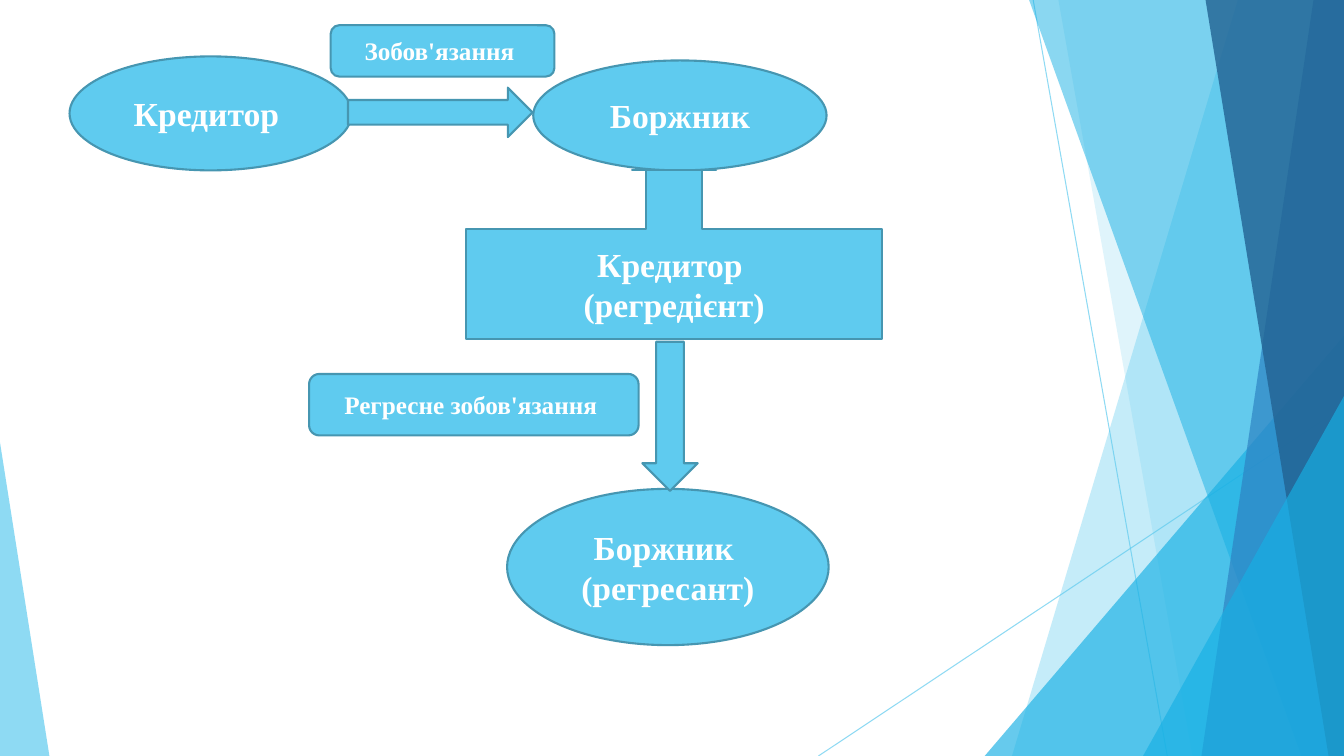
"""Build the slide on recourse obligations between creditor and debtor."""
from dataclasses import dataclass

from pptx import Presentation
from pptx import util as u
from pptx.dml.color import RGBColor
from pptx.enum import shapes, text
from pptx.oxml.ns import qn
from pptx.oxml.xmlchemy import OxmlElement
from pptx.shapes.base import BaseShape
from pptx.slide import Slide

WIDTH, HEIGHT = 960, 540
SKY = RGBColor(0x5F, 0xCB, 0xEF)
CYAN = RGBColor(0x17, 0xB0, 0xE4)
BLUE = RGBColor(0x2E, 0x83, 0xC3)
NAVY = RGBColor(0x22, 0x62, 0x92)
EDGE = RGBColor(0x46, 0x96, 0xB1)
WHITE = RGBColor(0xFF, 0xFF, 0xFF)

KIND = shapes.MSO_SHAPE
FRAME_FORMAT = {"word_wrap": True, "vertical_anchor": text.MSO_ANCHOR.MIDDLE}
FONT_FORMAT = {"name": "Times New Roman", "bold": True}


@dataclass
class Ray:
    start: tuple[float, float]
    end: tuple[float, float]


@dataclass
class Panel:
    top_x: float
    bottom_x: float
    color: RGBColor
    opacity: int


@dataclass
class Wedge:
    left: float
    top: float
    width: float
    apex: float
    color: RGBColor
    opacity: int


@dataclass
class Node:
    kind: shapes.MSO_SHAPE
    bounds: tuple[float, float, float, float]
    lines: tuple[str, ...] = ()
    size: float = 24
    adjustments: tuple[float, ...] = ()


RAYS = [
    Ray((738, 0), (833.8, HEIGHT)),
    Ray((WIDTH, 290.2), (584.6, HEIGHT)),
]

DECORATION = [
    Panel(884.2, 722.9, SKY, 36),
    Panel(756, 851.8, SKY, 20),
    Wedge(703.4, 239.8, 256.6, 1, CYAN, 66),
    Panel(735.1, 929.5, CYAN, 50),
    Panel(938.2, 858.2, BLUE, 70),
    Panel(861.1, 949, NAVY, 80),
    Wedge(816.5, 283, 143.5, 1, CYAN, 66),
    Wedge(0, 316.1, 35.3, 0, SKY, 70),
]

NODES = [
    Node(KIND.OVAL, (49.7, 40.3, 201.6, 81.4), ("Кредитор ",)),
    Node(KIND.OVAL, (380.9, 43.2, 209.5, 78.5), ("Боржник",)),
    Node(KIND.OVAL, (362.2, 349.2, 229.7, 111.6), ("Боржник ", "(регресант)")),
    Node(KIND.ROUNDED_RECTANGLE, (220.8, 267.1, 235.4, 43.9),
         ("Регресне зобов'язання ",), 18),
    Node(KIND.UP_ARROW_CALLOUT, (333, 121.7, 297, 120.2),
         ("Кредитор ", "(регредієнт)"), 24, (0.33, 0.25, 0, 0.65)),
    Node(KIND.ROUNDED_RECTANGLE, (236.2, 18, 159.8, 36.7), ("Зобов'язання ",), 18),
    Node(KIND.RIGHT_ARROW, (248.6, 62.6, 131.8, 35.3)),
    Node(KIND.DOWN_ARROW, (458.8, 244.1, 39.6, 106.6)),
]


def set_opacity(shape: BaseShape, percent: int) -> None:
    """Make the colour of a shape or connector partly transparent."""
    for color in shape._element.iter(qn("a:srgbClr")):
        alpha = OxmlElement("a:alpha")
        alpha.set("val", str(percent * 1000))
        color.append(alpha)


def draw_ray(page: Slide, ray: Ray) -> None:
    """Draw one thin decorative line."""
    points = [u.Pt(value) for value in (*ray.start, *ray.end)]
    line = page.shapes.add_connector(shapes.MSO_CONNECTOR.STRAIGHT, *points)
    line.line.color.rgb = SKY
    line.line.width = u.Pt(0.75)
    line._element.spPr.append(OxmlElement("a:effectLst"))
    set_opacity(line, 70)


def draw_decoration(page: Slide, item: Panel | Wedge) -> None:
    """Draw one translucent panel or triangular wedge."""
    if isinstance(item, Panel):
        builder = page.shapes.build_freeform(u.Pt(item.top_x), 0)
        corners = [(WIDTH, 0), (WIDTH, HEIGHT), (item.bottom_x, HEIGHT)]
        builder.add_line_segments([(u.Pt(x), u.Pt(y)) for x, y in corners])
        shape = builder.convert_to_shape()
    else:
        bounds = (item.left, item.top, item.width, HEIGHT - item.top)
        shape = page.shapes.add_shape(KIND.ISOSCELES_TRIANGLE, *map(u.Pt, bounds))
        shape.adjustments[0] = item.apex
    shape.shadow.inherit = False
    shape.fill.solid()
    shape.fill.fore_color.rgb = item.color
    shape.line.fill.background()
    set_opacity(shape, item.opacity)


def draw_node(page: Slide, node: Node) -> None:
    """Draw one diagram shape with its centred label."""
    box = page.shapes.add_shape(node.kind, *map(u.Pt, node.bounds))
    for index, value in enumerate(node.adjustments):
        box.adjustments[index] = value
    box.shadow.inherit = False
    box.fill.solid()
    box.fill.fore_color.rgb = SKY
    box.line.color.rgb = EDGE
    box.line.width = u.Pt(1.5)
    frame = box.text_frame
    for name, value in FRAME_FORMAT.items():
        setattr(frame, name, value)
    for index, line in enumerate(node.lines):
        para = frame.add_paragraph() if index else frame.paragraphs[0]
        para.alignment = text.PP_ALIGN.CENTER
        span = para.add_run()
        span.text = line
        for name, value in {**FONT_FORMAT, "size": u.Pt(node.size)}.items():
            setattr(span.font, name, value)
        span.font.color.rgb = WHITE


def main() -> None:
    """Assemble and save the deck."""
    deck = Presentation()
    deck.slide_width, deck.slide_height = u.Pt(WIDTH), u.Pt(HEIGHT)
    page = deck.slides.add_slide(deck.slide_layouts[6])
    for ray in RAYS:
        draw_ray(page, ray)
    for item in DECORATION:
        draw_decoration(page, item)
    for node in NODES:
        draw_node(page, node)
    deck.save("out.pptx")


if __name__ == "__main__":
    main()
